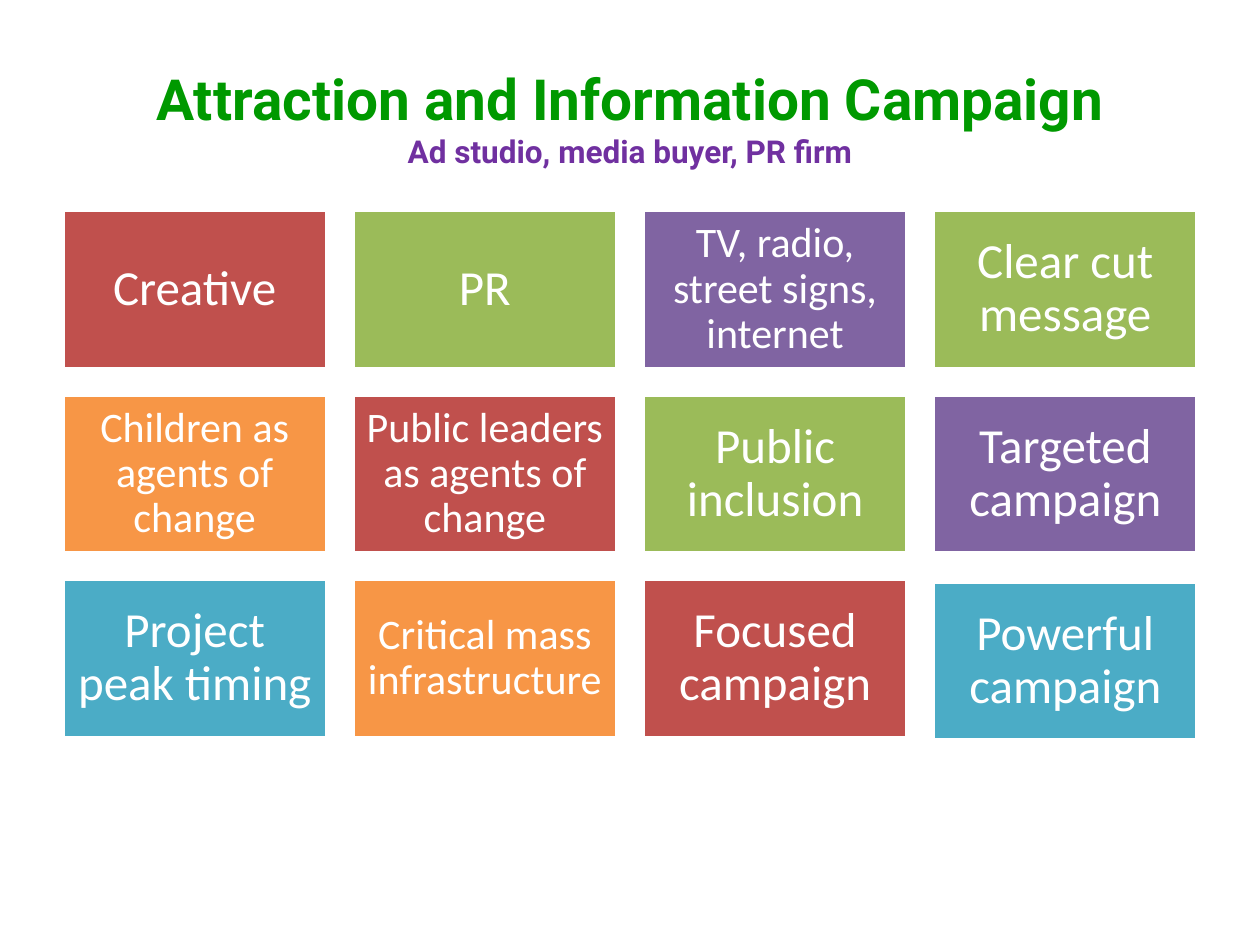
from pptx import Presentation
from pptx.dml.color import RGBColor
from pptx.enum import shapes, text
from pptx.util import Cm, Pt

HEADING = [
    ("Attraction and Information Campaign", 32.4, "009900"),
    ("Ad studio, media buyer, PR firm", 18, "7030A0"),
]
RED, GREEN, PURPLE, ORANGE, TEAL = "C0504D", "9BBB59", "8064A2", "F79646", "4BACC6"
LARGE, SMALL = 28, 24
INSETS = {LARGE: 0.3, SMALL: 0.25}
TILES = [
    [("Creative", RED, LARGE), ("PR", GREEN, LARGE),
     ("TV, radio, street signs, internet", PURPLE, SMALL),
     ("Clear cut message", GREEN, LARGE)],
    [("Children as agents of change", ORANGE, SMALL),
     ("Public leaders as agents of change", RED, SMALL),
     ("Public inclusion", GREEN, LARGE), ("Targeted campaign", PURPLE, LARGE)],
    [("Project peak timing", TEAL, LARGE),
     ("Critical mass infrastructure", ORANGE, SMALL),
     ("Focused campaign", RED, LARGE), ("Powerful campaign", TEAL, LARGE)],
]
LEFT, TOP = 1.27, 4.24
WIDTH, HEIGHT = 5.31, 3.19
COLUMN_STEP, ROW_STEP = 5.85, 3.72
LAST_TILE_DROP = 0.05


def color(value):
    return RGBColor.from_string(value)


def style(run, face, size, value, bold=False):
    run.font.name = face
    run.font.size = Pt(size)
    run.font.bold = bold
    run.font.color.rgb = color(value)


def add_heading(slide):
    heading = slide.shapes.add_textbox(Cm(1.27), Cm(0.76), Cm(22.86), Cm(3.18))
    frame = heading.text_frame
    frame.word_wrap = True
    frame.vertical_anchor = text.MSO_ANCHOR.MIDDLE
    paragraph = frame.paragraphs[0]
    paragraph.text = "\v".join(line for line, _, _ in HEADING)
    paragraph.alignment = text.PP_ALIGN.CENTER
    for run, (_, size, value) in zip(paragraph.runs, HEADING):
        style(run, "Roboto", size, value, True)


def add_tile(slide, left, top, label, fill, size):
    tile = slide.shapes.add_shape(
        shapes.MSO_SHAPE.RECTANGLE, Cm(left), Cm(top), Cm(WIDTH), Cm(HEIGHT))
    tile.shadow.inherit = False
    tile.fill.solid()
    tile.fill.fore_color.rgb = color(fill)
    tile.line.color.rgb = color("FFFFFF")
    tile.line.width = Pt(2)
    frame = tile.text_frame
    frame.word_wrap = True
    frame.vertical_anchor = text.MSO_ANCHOR.MIDDLE
    inset = Cm(INSETS[size])
    frame.margin_left = frame.margin_right = inset
    frame.margin_top = frame.margin_bottom = inset
    paragraph = frame.paragraphs[0]
    paragraph.text = label
    paragraph.alignment = text.PP_ALIGN.CENTER
    paragraph.line_spacing = 0.9
    style(paragraph.runs[0], "Calibri", size, "FFFFFF")


def main():
    deck = Presentation()
    deck.slide_width, deck.slide_height = Cm(25.4), Cm(19.05)
    slide = deck.slides.add_slide(deck.slide_layouts[6])
    add_heading(slide)
    for row, tiles in enumerate(TILES):
        for column, tile in enumerate(tiles):
            top = TOP + row * ROW_STEP
            if tile is TILES[-1][-1]:
                top += LAST_TILE_DROP
            add_tile(slide, LEFT + column * COLUMN_STEP, top, *tile)
    deck.save("out.pptx")


if __name__ == "__main__":
    main()
